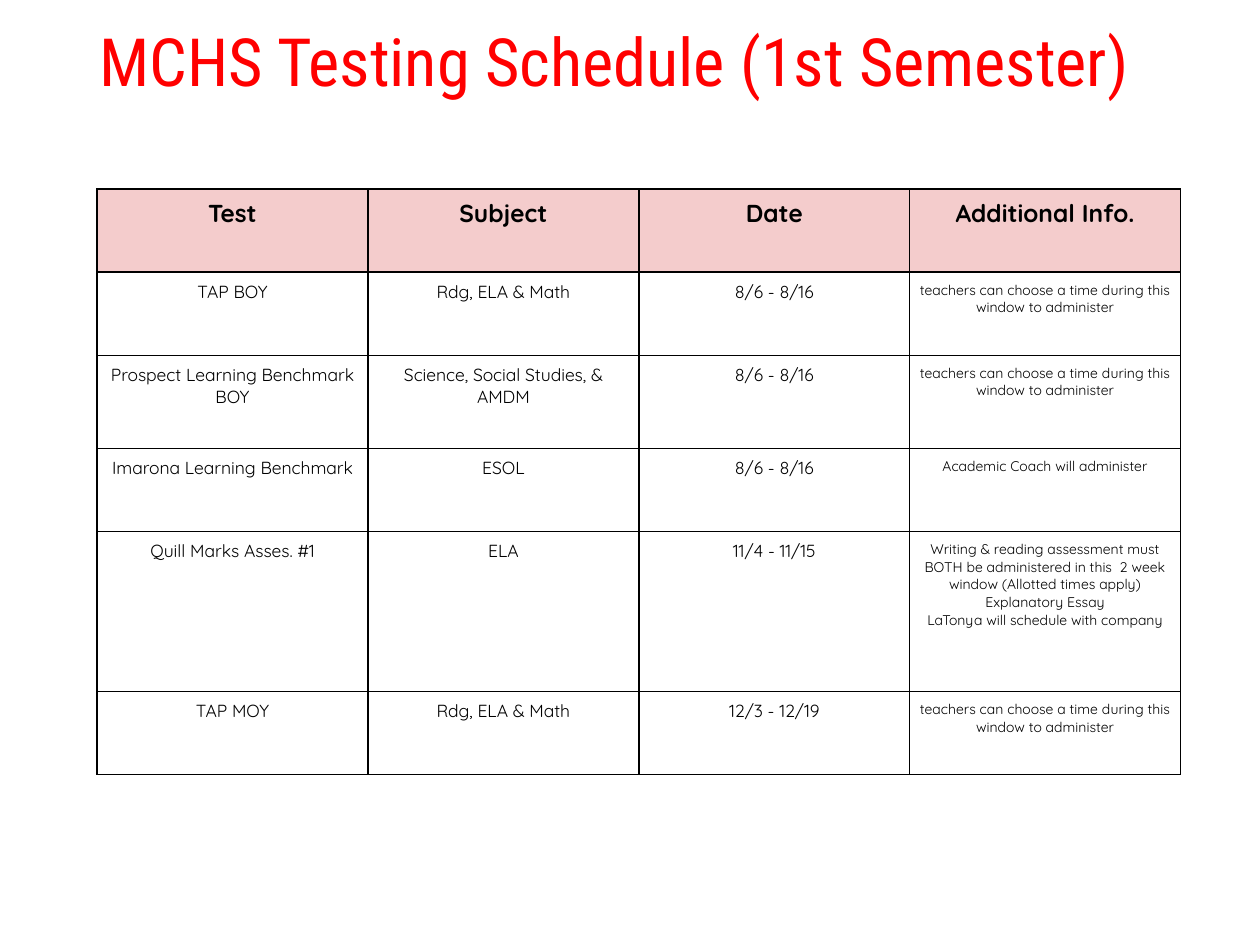
from typing import Any, NamedTuple

import pptx
import pptx.dml.color
import pptx.enum.text
import pptx.oxml
import pptx.oxml.ns
import pptx.util
from pptx.util import Inches

BLACK, RED, PINK, WHITE = "000000", "FF0000", "F4CCCC", "FFFFFF"
CENTER = pptx.enum.text.PP_ALIGN.CENTER
TOP = pptx.enum.text.MSO_ANCHOR.TOP


class TestRow(NamedTuple):
    test: str
    subject: str
    date: str
    info: str
    height: float = 0.66


WINDOW = "teachers can choose a time during this window to administer"
ESSAY = "\n".join([
    "Writing & reading assessment must BOTH be administered in this  2 week "
    "window (Allotted times apply)",
    "Explanatory Essay",
    "LaTonya will schedule with company",
])
HEADER = TestRow("Test", "Subject", "Date", "Additional Info.")
TESTS = [
    TestRow("TAP BOY", "Rdg, ELA & Math", "8/6 - 8/16", WINDOW),
    TestRow("Prospect Learning Benchmark BOY", "Science, Social Studies, & AMDM",
            "8/6 - 8/16", WINDOW, 0.74),
    TestRow("Imarona Learning Benchmark", "ESOL", "8/6 - 8/16",
            "Academic Coach will administer"),
    TestRow("Quill Marks Asses. #1", "ELA", "11/4 - 11/15", ESSAY, 1.27),
    TestRow("TAP MOY", "Rdg, ELA & Math", "12/3 - 12/19", WINDOW),
]
COLUMN_WIDTH = 2.15


def color(value: str) -> pptx.dml.color.RGBColor:
    return pptx.dml.color.RGBColor.from_string(value)


def set_attributes(target: Any, values: dict[str, Any]) -> None:
    for name, value in values.items():
        setattr(target, name, value)


def write(frame: Any, text: str, font: str, size: float, ink: str,
          bold: bool = False) -> None:
    """Fill a text frame with centred text, one paragraph per line."""
    frame.text = text
    for para in frame.paragraphs:
        para.alignment = CENTER
        for span in para.runs:
            set_attributes(span.font, {"name": font, "size": pptx.util.Pt(size),
                                       "bold": bold})
            span.font.color.rgb = color(ink)


def add_borders(cell: Any, ink: str, width: float) -> None:
    properties = cell._tc.get_or_add_tcPr()
    for index, side in enumerate(("lnL", "lnR", "lnT", "lnB")):
        line = pptx.oxml.parse_xml(
            f'<a:{side} {pptx.oxml.ns.nsdecls("a")} w="{pptx.util.Pt(width)}">'
            f'<a:solidFill><a:srgbClr val="{ink}"/></a:solidFill></a:{side}>')
        properties.insert(index, line)


def add_title(page: Any, text: str) -> None:
    title = page.shapes.title
    set_attributes(title, {"left": Inches(0.64), "top": Inches(0.06),
                           "width": Inches(8.48), "height": Inches(0.84)})
    frame = title.text_frame
    margins = dict.fromkeys(
        ("margin_left", "margin_right", "margin_top", "margin_bottom"), Inches(0.1))
    set_attributes(frame, margins | {
        "word_wrap": True, "vertical_anchor": TOP,
        "auto_size": pptx.enum.text.MSO_AUTO_SIZE.SHAPE_TO_FIT_TEXT})
    write(frame, text, "Roboto Condensed", 38, RED)


def add_schedule(page: Any, rows: list[TestRow]) -> None:
    columns = ("test", "subject", "date", "info")
    table = page.shapes.add_table(
        len(rows), len(columns), Inches(0.77), Inches(1.5),
        Inches(COLUMN_WIDTH * len(columns)),
        Inches(sum(row.height for row in rows))).table
    for column in table.columns:
        column.width = Inches(COLUMN_WIDTH)
    margins = dict.fromkeys(
        ("margin_left", "margin_right", "margin_top", "margin_bottom"), Inches(0.07))
    for row_index, row in enumerate(rows):
        table.rows[row_index].height = Inches(row.height)
        is_header = row_index == 0
        for column_index, name in enumerate(columns):
            cell = table.cell(row_index, column_index)
            set_attributes(cell, margins | {"vertical_anchor": TOP})
            cell.fill.solid()
            cell.fill.fore_color.rgb = color(PINK if is_header else WHITE)
            size = 14 if is_header else 8 if name == "info" else 10
            write(cell.text_frame, getattr(row, name), "Quicksand", size, BLACK,
                  is_header)
            add_borders(cell, BLACK, 1)


def main() -> None:
    deck = pptx.Presentation()
    set_attributes(deck, {"slide_width": Inches(10), "slide_height": Inches(7.5)})
    page = deck.slides.add_slide(deck.slide_layouts.get_by_name("Title Only"))
    add_title(page, "MCHS Testing Schedule (1st Semester)")
    add_schedule(page, [HEADER, *TESTS])
    deck.save("out.pptx")


if __name__ == "__main__":
    main()
